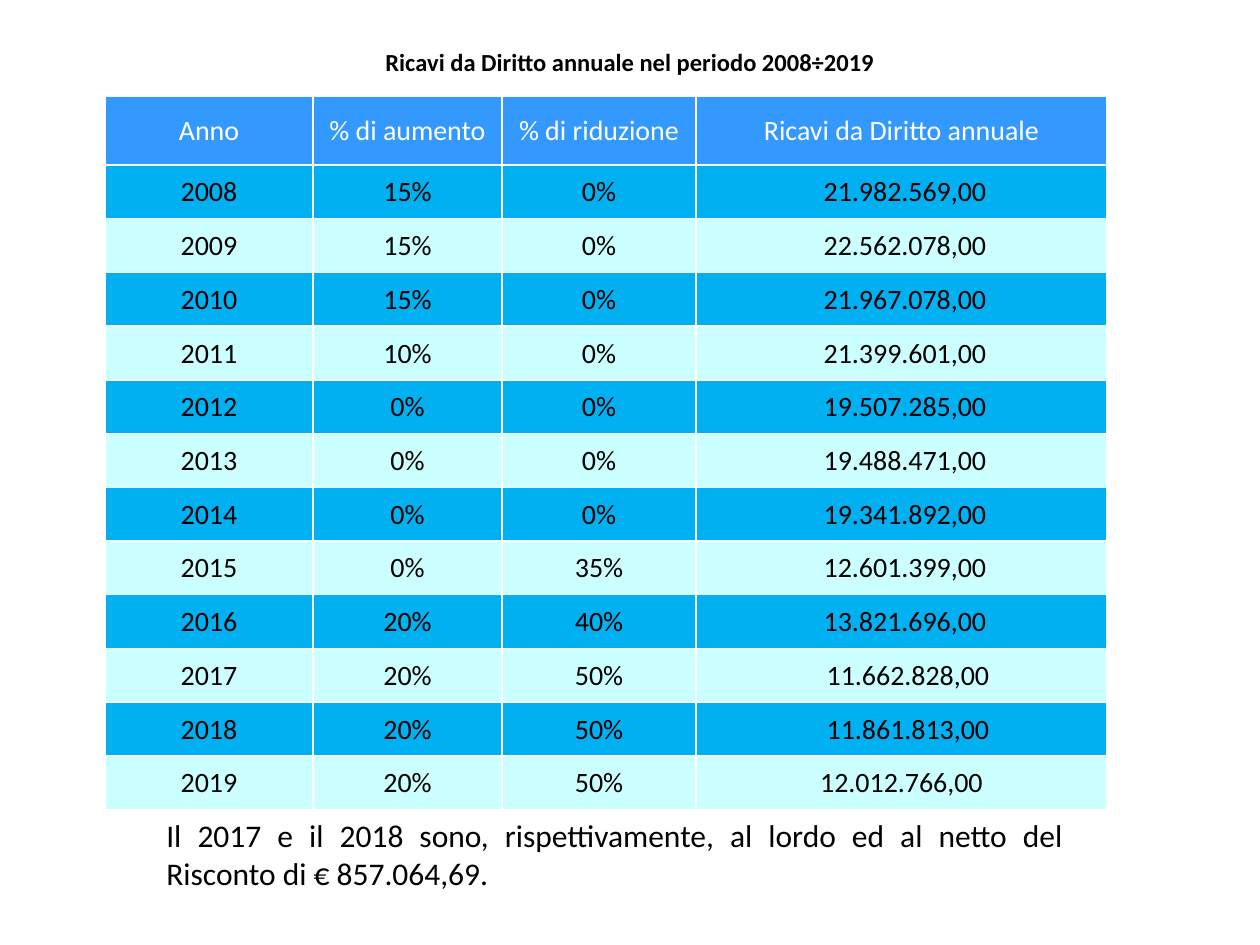
from pptx import Presentation
from pptx import util as u
from pptx.dml.color import RGBColor
from pptx.enum import text
from pptx.oxml import parse_xml
from pptx.oxml.ns import nsdecls

PX = u.Inches(1) / 126


def px(length):
    return u.Emu(round(length * PX))


def style(para, size, color, align):
    para.alignment = align
    para.font.name = "Calibri"
    para.font.size = u.Pt(size)
    para.font.color.rgb = RGBColor.from_string(color)


deck = Presentation()
deck.slide_width, deck.slide_height = px(1260), px(945)
page = deck.slides.add_slide(deck.slide_layouts[5])

title = page.shapes.title
title.left, title.top, title.width, title.height = px(63), px(38), px(1134), px(48)
title.text_frame.text = "Ricavi da Diritto annuale nel periodo 2008÷2019"
title.text_frame.vertical_anchor = text.MSO_ANCHOR.MIDDLE
style(title.text_frame.paragraphs[0], 14, "000000", text.PP_ALIGN.CENTER)
title.text_frame.paragraphs[0].font.bold = True

header = ("Anno", "% di aumento", "% di riduzione", "Ricavi da Diritto annuale")
revenues = [
    ("2008", "15%", "0%", "21.982.569,00"),
    ("2009", "15%", "0%", "22.562.078,00"),
    ("2010", "15%", "0%", "21.967.078,00"),
    ("2011", "10%", "0%", "21.399.601,00"),
    ("2012", "0%", "0%", "19.507.285,00"),
    ("2013", "0%", "0%", "19.488.471,00"),
    ("2014", "0%", "0%", "19.341.892,00"),
    ("2015", "0%", "35%", "12.601.399,00"),
    ("2016", "20%", "40%", "13.821.696,00"),
    ("2017", "20%", "50%", "11.662.828,00"),
    ("2018", "20%", "50%", "11.861.813,00"),
    ("2019", "20%", "50%", "12.012.766,00"),
]
amount_indents = {"2017": 13, "2018": 13, "2019": 0}
header_height, body_height = 69, 645

rows = [header] + revenues
table = page.shapes.add_table(
    len(rows), len(header), px(105), px(96), px(1002), px(header_height + body_height)
).table
for column, width in zip(table.columns, (208, 189, 194, 411)):
    column.width = px(width)

for r, values in enumerate(rows):
    table.rows[r].height = px(header_height if r == 0 else body_height / len(revenues))
    fill = "3399FF" if r == 0 else ("CCFFFF", "00B0F0")[r % 2]
    for c, value in enumerate(values):
        cell = table.cell(r, c)
        cell.text = value
        cell.vertical_anchor = text.MSO_ANCHOR.MIDDLE
        indent = amount_indents.get(values[0], 7) if r and c == 3 else 0
        cell.margin_left = px(1 + indent)
        cell.margin_right = cell.margin_top = px(1)
        cell.margin_bottom = 0
        style(cell.text_frame.paragraphs[0], 16, "000000" if r else "FFFFFF", text.PP_ALIGN.CENTER)
        for side in ("lnL", "lnR", "lnT", "lnB"):
            cell._tc.get_or_add_tcPr().append(parse_xml(
                f'<a:{side} {nsdecls("a")} w="12700"><a:solidFill>'
                f'<a:srgbClr val="FFFFFF"/></a:solidFill></a:{side}>'
            ))
        cell.fill.solid()
        cell.fill.fore_color.rgb = RGBColor.from_string(fill)

note = page.shapes.add_textbox(px(154), px(810), px(922), px(89)).text_frame
note.word_wrap = True
note.auto_size = text.MSO_AUTO_SIZE.SHAPE_TO_FIT_TEXT
note.text = (
    "Il 2017 e il 2018 sono, rispettivamente, al lordo ed al netto del "
    "Risconto di € 857.064,69."
)
style(note.paragraphs[0], 18, "000000", text.PP_ALIGN.JUSTIFY)

deck.save("out.pptx")
